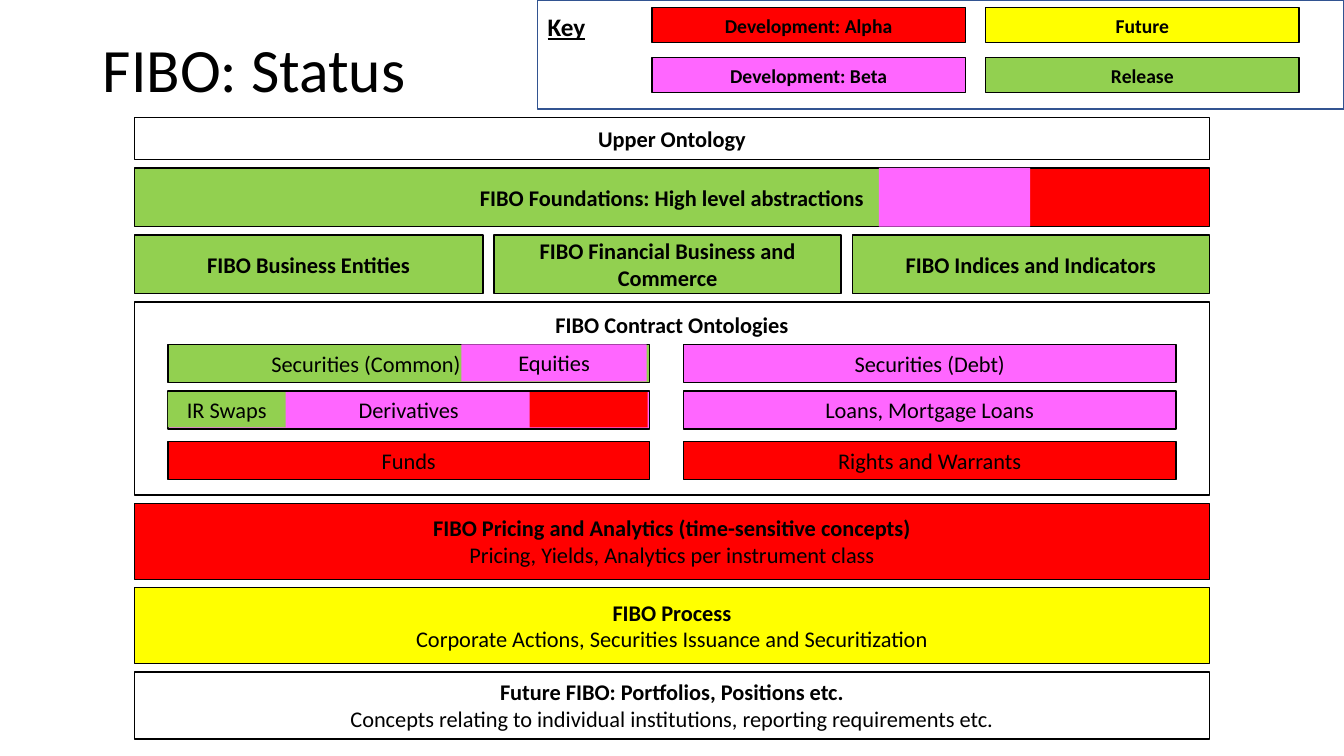
import pptx
import pptx.util
import pptx.dml.color
import pptx.enum.shapes
import pptx.enum.text

Cm = pptx.util.Cm
Pt = pptx.util.Pt
RGBColor = pptx.dml.color.RGBColor
ALIGN = pptx.enum.text.PP_ALIGN
ANCHOR = pptx.enum.text.MSO_ANCHOR

BLACK = RGBColor(0x00, 0x00, 0x00)
WHITE = RGBColor(0xFF, 0xFF, 0xFF)
KEY_BORDER = RGBColor(0x32, 0x54, 0x91)
ALPHA = RGBColor(0xFF, 0x00, 0x00)
BETA = RGBColor(0xFF, 0x66, 0xFF)
RELEASE = RGBColor(0x92, 0xD0, 0x50)
FUTURE = RGBColor(0xFF, 0xFF, 0x00)

FONT = "Calibri"
BAND_LEFT, BAND_WIDTH, BAND_GAP = 3.39, 27.09, 0.21


def add_box(page, area, fill, text="", border=BLACK, size=16, bold=False,
            align=ALIGN.CENTER, anchor=ANCHOR.MIDDLE):
    """Draw a rectangle in area (left, top, width, height in cm).

    A fill or border of None is left out; only the first paragraph can be bold.
    """
    box = page.shapes.add_shape(pptx.enum.shapes.MSO_SHAPE.RECTANGLE,
                                *[Cm(length) for length in area])
    box.shadow.inherit = False
    if fill is None:
        box.fill.background()
    else:
        box.fill.solid()
        box.fill.fore_color.rgb = fill
    if border is None:
        box.line.fill.background()
    else:
        box.line.color.rgb = border
        box.line.width = Pt(1)
    frame = box.text_frame
    frame.word_wrap = True
    frame.vertical_anchor = anchor
    frame.text = text
    for index, para in enumerate(frame.paragraphs):
        para.alignment = align
        for span in para.runs:
            span.font.name = FONT
            span.font.size = Pt(size)
            span.font.bold = bold and index == 0
            span.font.color.rgb = BLACK
    return box


def add_title(page, area):
    title = page.shapes.title
    title.left, title.top, title.width, title.height = [Cm(length) for length in area]
    frame = title.text_frame
    frame.text = "FIBO: Status"
    frame.vertical_anchor = ANCHOR.MIDDLE
    para = frame.paragraphs[0]
    para.alignment = ALIGN.LEFT
    para.line_spacing = 0.9
    font = para.runs[0].font
    font.name, font.size, font.color.rgb = FONT, Pt(44), BLACK


def add_key(page, area):
    left, top = area[:2]
    panel = add_box(page, area, WHITE, "Key", KEY_BORDER, size=18, bold=True,
                    align=ALIGN.LEFT, anchor=ANCHOR.TOP)
    panel.text_frame.margin_top = Cm(0.28)
    panel.text_frame.paragraphs[0].runs[0].font.underline = True
    entries = [("Development: Alpha", ALPHA), ("Future", FUTURE),
               ("Development: Beta", BETA), ("Release", RELEASE)]
    for index, (label, color) in enumerate(entries):
        row, column = divmod(index, 2)
        add_box(page, (left + 2.88 + 8.41 * column, top + 0.19 + 1.26 * row, 7.9, 0.89),
                color, label, size=14, bold=True)


def add_foundations(page, area):
    left, top, width, height = area
    beta_start, alpha_start = 18.76, 22.57
    add_box(page, (left, top, beta_start, height), RELEASE, border=None)
    add_box(page, (left + alpha_start, top, width - alpha_start, height), ALPHA, border=None)
    add_box(page, area, None, "FIBO Foundations: High level abstractions", bold=True)
    add_box(page, (left + beta_start, top, alpha_start - beta_start, height),
            BETA, border=None)


def add_domains(page, area):
    left, top, width, height = area
    domains = [("FIBO Business Entities", 8.78),
               ("FIBO Financial Business and Commerce", 8.75),
               ("FIBO Indices and Indicators", 9.0)]
    for label, domain_width in domains:
        add_box(page, (left, top, domain_width, height), RELEASE, label, bold=True)
        left += domain_width + 0.28


def add_contracts(page, area):
    left, top, width, height = area
    panel = add_box(page, area, WHITE, "FIBO Contract Ontologies", bold=True,
                    anchor=ANCHOR.TOP)
    panel.text_frame.margin_top = Cm(0.23)
    first, second = left + 0.84, left + 13.83
    first_width, second_width, row_height = 12.14, 12.42, 0.96
    securities, derivatives, funds = [top + offset for offset in (1.07, 2.24, 3.51)]

    rows = [(securities, "Securities (Debt)", BETA),
            (derivatives, "Loans, Mortgage Loans", BETA),
            (funds, "Rights and Warrants", ALPHA)]
    for row_top, label, color in rows:
        add_box(page, (second, row_top, second_width, row_height), color, label)

    common = add_box(page, (first, securities, first_width, row_height), RELEASE,
                     "Securities (Common)", align=ALIGN.RIGHT)
    common.text_frame.margin_right = Cm(4.76)
    add_box(page, (first, derivatives, first_width, row_height), BETA, "Derivatives")
    add_box(page, (first, funds, first_width, row_height), ALPHA, "Funds")

    add_box(page, (first + 7.4, securities, 4.67, 0.93), BETA, "Equities", border=None)
    add_box(page, (first, derivatives + 0.03, 2.97, 0.89), RELEASE, "IR Swaps", border=None)
    add_box(page, (first + 9.12, derivatives + 0.03, 2.97, 0.89), ALPHA, border=None)


def add_band(fill, text):
    """Return a drawing function for a plain full-width band."""
    def draw(page, area):
        add_box(page, area, fill, text, bold=True)
    return draw


def add_stack(page, top):
    bands = [
        (1.06, add_band(WHITE, "Upper Ontology")),
        (1.48, add_foundations),
        (1.48, add_domains),
        (4.87, add_contracts),
        (1.91, add_band(ALPHA, "FIBO Pricing and Analytics (time-sensitive concepts)\n"
                               "Pricing, Yields, Analytics per instrument class")),
        (1.91, add_band(FUTURE, "FIBO Process\n"
                                "Corporate Actions, Securities Issuance and Securitization")),
        (1.69, add_band(WHITE, "Future FIBO: Portfolios, Positions etc.\n"
                               "Concepts relating to individual institutions, "
                               "reporting requirements etc.")),
    ]
    for height, draw in bands:
        draw(page, (BAND_LEFT, top, BAND_WIDTH, height))
        top += height + BAND_GAP


def main():
    deck = pptx.Presentation()
    deck.slide_width, deck.slide_height = Cm(33.87), Cm(19.05)
    page = deck.slides.add_slide(deck.slide_layouts[5])
    add_title(page, (2.34, 0, 29.21, 3.68))
    add_stack(page, 2.96)
    add_key(page, (13.55, 0, 20.32, 2.75))
    deck.save("out.pptx")


if __name__ == "__main__":
    main()
